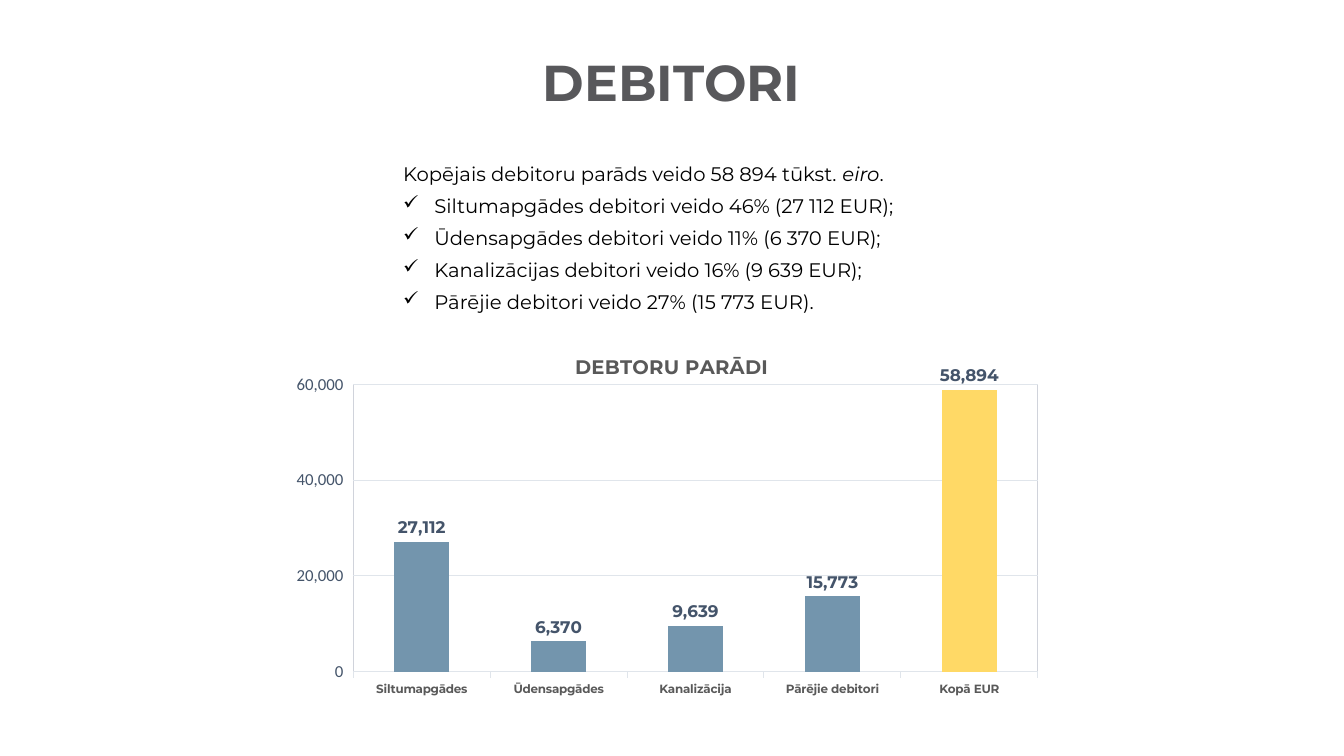
from lxml import etree
from pptx import Presentation
from pptx.chart.data import CategoryChartData
from pptx.dml.color import RGBColor
from pptx.enum.chart import XL_CHART_TYPE as ChartType, XL_LABEL_POSITION as LabelPos, XL_TICK_MARK as Tick
from pptx.enum.text import MSO_ANCHOR as Anchor, MSO_AUTO_SIZE as AutoSize, PP_ALIGN as Align
from pptx.oxml import parse_xml
from pptx.oxml.ns import nsdecls, qn
from pptx.util import Inches, Pt

HEADING = "DEBITORI"
INTRO = [("Kopējais debitoru parāds veido 58 894 tūkst. ", False), ("eiro", True), (".", False)]
SHARES = [
    "Siltumapgādes debitori veido 46% (27 112 EUR);",
    "Ūdensapgādes debitori veido 11% (6 370 EUR);",
    "Kanalizācijas debitori veido 16% (9 639 EUR);",
    "Pārējie debitori veido 27% (15 773 EUR).",
]
CHART_HEADING = "DEBTORU PARĀDI"
DEBTS = {
    "Siltumapgādes": 27112,
    "Ūdensapgādes": 6370,
    "Kanalizācija": 9639,
    "Pārējie debitori": 15773,
    "Kopā EUR": 58894,
}
COLORS = {
    "heading": "58585B", "body": "000000", "chart_text": "595959", "numbers": "44546A",
    "grid": "E0E5EB", "frame": "D0D3DB", "bar": "7395AD", "total": "FFD966",
}
BRAND_FONT = "Montserrat"
NUMBER_FORMAT = "#,##0"


def rgb(name):
    return RGBColor.from_string(COLORS[name])


def set_font(font, size, color, bold=False, name=BRAND_FONT):
    font.name, font.size, font.bold = name, Pt(size), bold
    font.color.rgb = rgb(color)


def set_line(line, color):
    line.color.rgb = rgb(color)
    line.width = Pt(0.75)


def set_layout(parent, **places):
    layout = parent.find(qn("c:layout"))
    if layout is None:
        layout = etree.Element(qn("c:layout"))
        parent.insert(0, layout)
    manual = etree.SubElement(layout, qn("c:manualLayout"))
    for tag, value in places.items():
        etree.SubElement(manual, qn(f"c:{tag}")).set("val", str(value))


def add_heading(slide):
    heading = slide.shapes.title
    heading.left, heading.top = Inches(0.26), Inches(0.12)
    heading.width, heading.height = Inches(12.8), Inches(1.45)
    frame = heading.text_frame
    frame.text = HEADING
    frame.vertical_anchor = Anchor.MIDDLE
    line = frame.paragraphs[0]
    line.alignment, line.line_spacing = Align.CENTER, 0.9
    set_font(line.font, 36, "heading", bold=True)


def add_summary(slide):
    box = slide.shapes.add_textbox(Inches(3.9), Inches(1.56), Inches(7.32), Inches(1.62))
    frame = box.text_frame
    frame.word_wrap, frame.auto_size = True, AutoSize.SHAPE_TO_FIT_TEXT
    for words, italic in INTRO:
        run = frame.paragraphs[0].add_run()
        run.text = words
        if italic:
            run.font.italic = True
    for share in SHARES:
        item = frame.add_paragraph()
        item.text = share
        props = item._p.get_or_add_pPr()
        props.set("marL", str(Inches(0.31)))
        props.set("indent", str(-Inches(0.31)))
        etree.SubElement(props, qn("a:buChar")).set("char", "✓")
    for paragraph in frame.paragraphs:
        paragraph.alignment, paragraph.space_before = Align.JUSTIFY, Pt(6)
        set_font(paragraph.font, 14, "body")


def add_debt_chart(slide):
    data = CategoryChartData(number_format=NUMBER_FORMAT)
    data.categories = list(DEBTS)
    data.add_series("Series 1", list(DEBTS.values()))
    chart = slide.shapes.add_chart(
        ChartType.COLUMN_CLUSTERED, Inches(2.83), Inches(3.29), Inches(7.67), Inches(4.56), data
    ).chart
    chart.has_legend = False
    set_font(chart.font, 10, "body", name="Calibri")

    chart.has_title = True
    caption = chart.chart_title.text_frame
    caption.text = CHART_HEADING
    set_font(caption.paragraphs[0].font, 14, "chart_text", bold=True)
    set_layout(chart.chart_title._element, xMode="edge", yMode="edge", x=0.37, y=0.04)

    plot_area = chart.element.find(".//" + qn("c:plotArea"))
    set_layout(plot_area, layoutTarget="inner", xMode="edge", yMode="edge",
               x=0.088, y=0.115, w=0.885, h=0.625)
    plot_area.append(parse_xml(
        f'<c:spPr {nsdecls("c", "a")}><a:noFill/><a:ln w="{Pt(0.75)}"><a:solidFill>'
        f'<a:srgbClr val="{COLORS["frame"]}"/></a:solidFill></a:ln></c:spPr>'))

    names = chart.category_axis
    names.major_tick_mark = Tick.OUTSIDE
    set_font(names.tick_labels.font, 8.5, "chart_text", bold=True)
    set_line(names.format.line, "grid")

    amounts = chart.value_axis
    amounts.minimum_scale, amounts.maximum_scale, amounts.major_unit = 0, 60000, 20000
    amounts.major_tick_mark = Tick.OUTSIDE
    amounts.format.line.fill.background()
    set_line(amounts.major_gridlines.format.line, "grid")
    set_font(amounts.tick_labels.font, 12, "numbers", name="Calibri")
    amounts.tick_labels.number_format = NUMBER_FORMAT
    amounts.tick_labels.number_format_is_linked = False

    plot = chart.plots[0]
    plot.gap_width, plot.vary_by_categories = 150, False
    debts = plot.series[0]
    total = debts.points[len(DEBTS) - 1]
    for part, color in ((debts, "bar"), (total, "total")):
        part.format.fill.solid()
        part.format.fill.fore_color.rgb = rgb(color)
    labels = debts.data_labels
    labels.show_value, labels.position = True, LabelPos.OUTSIDE_END
    labels.number_format, labels.number_format_is_linked = NUMBER_FORMAT, False
    set_font(labels.font, 12, "numbers", bold=True)


def main():
    deck = Presentation()
    deck.slide_width, deck.slide_height = Inches(13.33), Inches(7.5)
    slide = deck.slides.add_slide(deck.slide_layouts[5])
    add_heading(slide)
    add_summary(slide)
    add_debt_chart(slide)
    deck.save("out.pptx")


if __name__ == "__main__":
    main()
